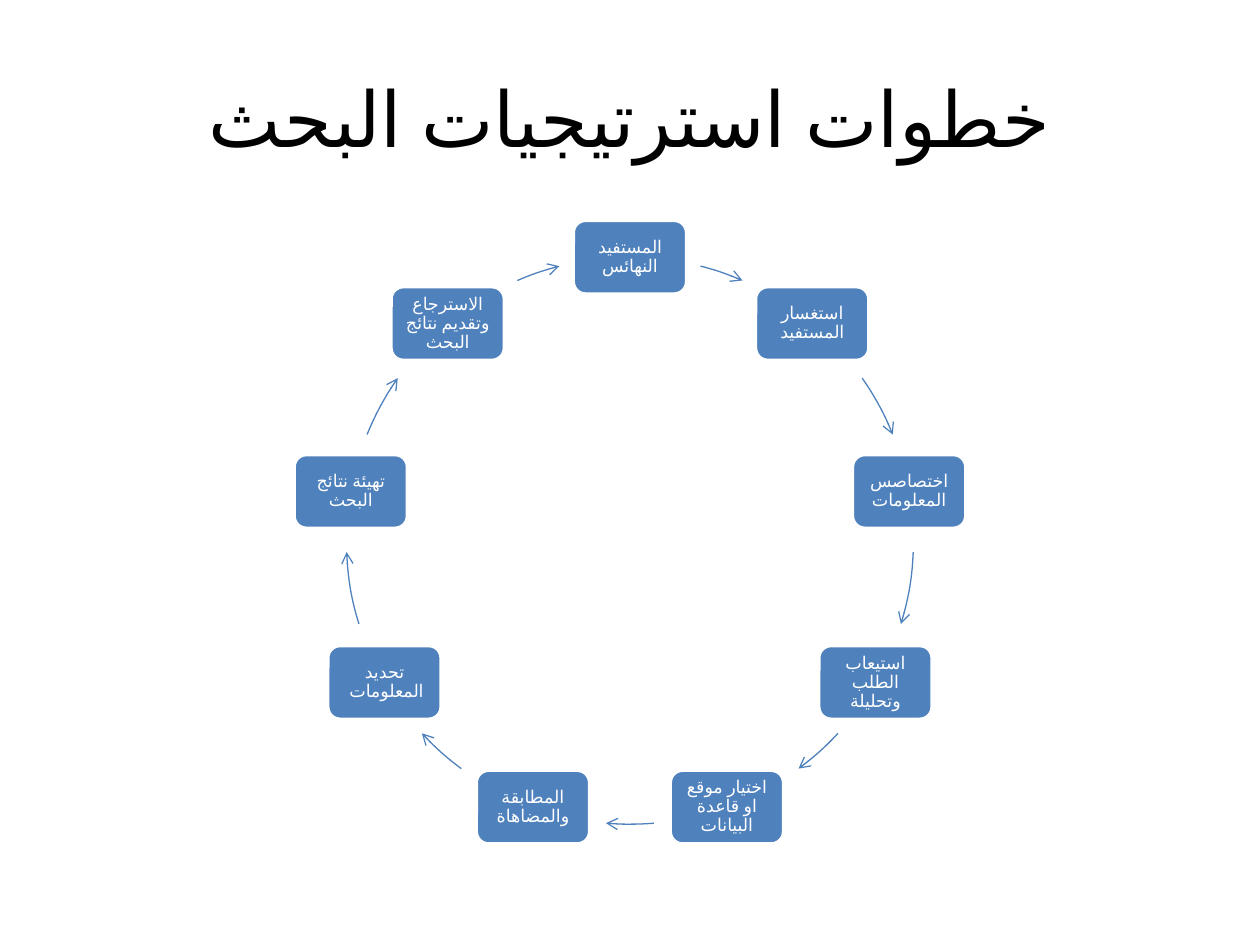
from dataclasses import dataclass
from math import cos, radians, sin

from lxml import etree
from pptx import Presentation
from pptx.dml.color import RGBColor
from pptx.enum import lang, shapes, text
from pptx.oxml import ns
from pptx.util import Pt


@dataclass(frozen=True)
class Theme:
    font: str = "Calibri"
    title_size: float = 44
    step_size: float = 10
    title_color: RGBColor = RGBColor(0x00, 0x00, 0x00)
    step_color: RGBColor = RGBColor(0x4F, 0x81, 0xBD)
    light: RGBColor = RGBColor(0xFF, 0xFF, 0xFF)


@dataclass(frozen=True)
class Ring:
    center_x: float = 360
    center_y: float = 309
    radius: float = 162
    step_width: float = 64.8
    step_height: float = 42.12


@dataclass(frozen=True)
class Arrow:
    """A stretch of the ring, in degrees clockwise from the top."""
    start: float
    end: float

    def mirrored(self) -> "Arrow":
        return Arrow(360 - self.end, 360 - self.start)


THEME = Theme()
RING = Ring()
STEPS = [
    "المستفيد النهائس",
    "استغسار المستفيد",
    "اختصاصس المعلومات",
    "استيعاب الطلب وتحليلة",
    "اختيار موقع او قاعدة البيانات",
    "المطابقة والمضاهاة",
    "تحديد المعلومات ",
    "تهيئة نتائج البحث",
    "الاسترجاع وتقديم نتائج البحث",
]
RIGHT_ARROWS = [Arrow(14.4, 23.4), Arrow(55, 68), Arrow(92.3, 107.1), Arrow(132.8, 143.5)]
BOTTOM_ARROW = Arrow(175.15, 184.85)


def write_text(shape, words: str, size: float, color: RGBColor, margin: float,
               spacing: float = 1.0) -> None:
    """Fill the shape with one centred right-to-left paragraph."""
    frame = shape.text_frame
    frame_format = {"word_wrap": True, "vertical_anchor": text.MSO_ANCHOR.MIDDLE}
    for side in ("left", "top", "right", "bottom"):
        frame_format[f"margin_{side}"] = Pt(margin)
    for name, value in frame_format.items():
        setattr(frame, name, value)

    paragraph = frame.paragraphs[0]
    paragraph.alignment = text.PP_ALIGN.CENTER
    paragraph.line_spacing = spacing
    paragraph._p.get_or_add_pPr().set("rtl", "1")
    run = paragraph.add_run()
    run.text = words
    run_format = {"name": THEME.font, "size": Pt(size),
                  "language_id": lang.MSO_LANGUAGE_ID.ARABIC_IRAQ}
    for name, value in run_format.items():
        setattr(run.font, name, value)
    run.font.color.rgb = color


def add_title(slide, words: str) -> None:
    box = slide.shapes.add_textbox(Pt(36), Pt(21.6), Pt(648), Pt(90))
    write_text(box, words, THEME.title_size, THEME.title_color, margin=3.6)


def add_step(slide, words: str, angle: float) -> None:
    left = RING.center_x + RING.radius * sin(radians(angle)) - RING.step_width / 2
    top = RING.center_y - RING.radius * cos(radians(angle)) - RING.step_height / 2
    box = slide.shapes.add_shape(
        shapes.MSO_SHAPE.ROUNDED_RECTANGLE,
        Pt(left), Pt(top), Pt(RING.step_width), Pt(RING.step_height))
    box.shadow.inherit = False
    box.fill.solid()
    box.fill.fore_color.rgb = THEME.step_color
    box.line.color.rgb = THEME.light
    box.line.width = Pt(2)
    write_text(box, words, THEME.step_size, THEME.light, margin=3, spacing=0.9)


def add_arrow(slide, arrow: Arrow) -> None:
    arc = slide.shapes.add_shape(
        shapes.MSO_SHAPE.ARC,
        Pt(RING.center_x - RING.radius), Pt(RING.center_y - RING.radius),
        Pt(2 * RING.radius), Pt(2 * RING.radius))
    for index, angle in enumerate((arrow.start, arrow.end)):
        # Arc angles run from three o'clock, in 60000ths of a degree;
        # an adjustment of 1 stands for 100000 of these.
        arc.adjustments[index] = (angle - 90) % 360 * 0.6
    arc.shadow.inherit = False
    arc.fill.background()
    arc.line.color.rgb = THEME.step_color
    arc.line.width = Pt(0.75)
    etree.SubElement(arc.line._get_or_add_ln(), ns.qn("a:tailEnd"), type="arrow")


def main() -> None:
    presentation = Presentation()
    presentation.slide_width, presentation.slide_height = Pt(720), Pt(540)
    slide = presentation.slides.add_slide(presentation.slide_layouts[6])

    add_title(slide, "خطوات استرتيجيات البحث")
    left_arrows = [arrow.mirrored() for arrow in reversed(RIGHT_ARROWS)]
    arrows = [*RIGHT_ARROWS, BOTTOM_ARROW, *left_arrows]
    for index, (words, arrow) in enumerate(zip(STEPS, arrows)):
        add_step(slide, words, index * 360 / len(STEPS))
        add_arrow(slide, arrow)

    presentation.save("out.pptx")


if __name__ == "__main__":
    main()
